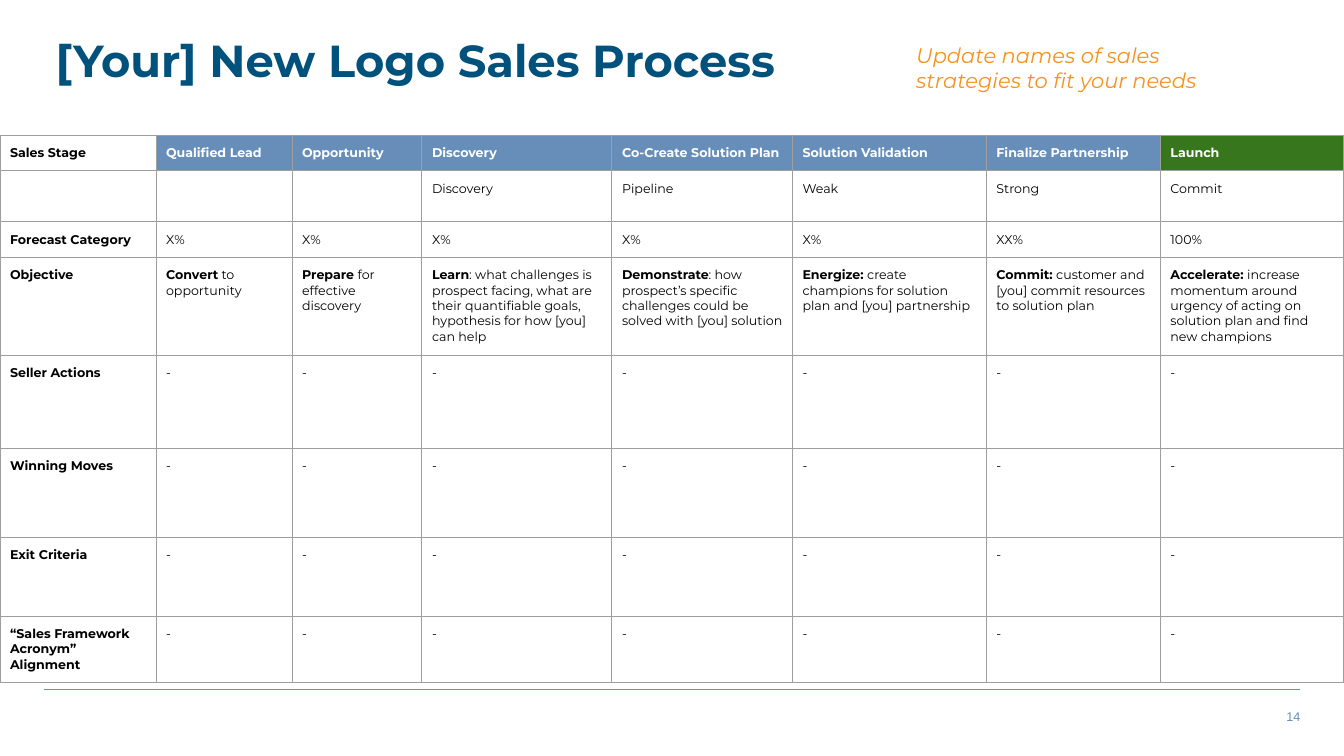
"""Build a sales process slide with a stage-by-stage table."""
from dataclasses import dataclass

from lxml import etree
from pptx import Presentation
from pptx import util as u
from pptx.dml.color import RGBColor
from pptx.enum import shapes, text
from pptx.oxml import ns

COLORS = {
    "navy": "00517C", "blue": "668EB9", "green": "38761D", "orange": "F6921E",
    "black": "000000", "white": "FFFFFF", "gray": "9E9E9E",
}
SLIDE_WIDTH, SLIDE_HEIGHT = u.Inches(13.333), u.Inches(7.5)
COLUMN_SHARES = (11.61, 10.12, 9.67, 14.14, 13.43, 14.43, 12.95, 13.65)
ROW_SHARES = (4.63, 6.48, 4.63, 12.96, 12.3, 11.77, 10.45, 8.77)


@dataclass(frozen=True)
class Box:
    left: float
    top: float
    width: float
    height: float


@dataclass(frozen=True)
class Style:
    size: float
    color: str
    name: str = "Montserrat"
    bold: bool = False
    italic: bool = False


@dataclass(frozen=True)
class Entry:
    lead: str = ""
    rest: str = ""
    color: str = "black"
    fill: str = "white"


TITLE_BOX = Box(3.38, 4.4, 63.9, 10.13)
HINT_BOX = Box(67.43, 4.27, 24.38, 5.33)
NUMBER_BOX = Box(57.5, 93.07, 40, 3.33)
TABLE_BOX = Box(0, 17.87, sum(COLUMN_SHARES), sum(ROW_SHARES))
RULE_BOX = Box(3.3, 91.2, 93.4, 0)

STAGES = ("Qualified Lead", "Opportunity", "Discovery", "Co-Create Solution Plan",
          "Solution Validation", "Finalize Partnership")
CATEGORIES = ("", "", "Discovery", "Pipeline", "Weak", "Strong", "Commit")
FORECASTS = ("X%",) * 5 + ("XX%", "100%")
OBJECTIVES = (
    Entry("Convert", " to opportunity"),
    Entry("Prepare ", "for effective discovery"),
    Entry("Learn", ": what challenges is prospect facing, what are their quantifiable "
          "goals, hypothesis for how [you] can help"),
    Entry("Demonstrate", ": how prospect’s specific challenges could be solved with "
          "[you] solution"),
    Entry("Energize: ", "create champions for solution plan and [you] partnership"),
    Entry("Commit: ", "customer and [you] commit resources to solution plan"),
    Entry("Accelerate: ", "increase momentum around urgency of acting on solution plan "
          "and find new champions"),
)
OPEN_ROWS = ("Seller Actions", "Winning Moves", "Exit Criteria",
             "“Sales Framework Acronym” Alignment")


def plain_row(label: str, values: tuple[str, ...]) -> list[Entry]:
    return [Entry(label), *(Entry(rest=value) for value in values)]


ROWS = [
    [Entry("Sales Stage"), *(Entry(stage, color="white", fill="blue") for stage in STAGES),
     Entry("Launch", color="white", fill="green")],
    plain_row("", CATEGORIES),
    plain_row("Forecast Category", FORECASTS),
    [Entry("Objective"), *OBJECTIVES],
    *(plain_row(label, ("-",) * 7) for label in OPEN_ROWS),
]


def rgb(color: str) -> RGBColor:
    return RGBColor.from_string(COLORS[color])


def across(share: float) -> int:
    return round(SLIDE_WIDTH * share / 100)


def down(share: float) -> int:
    return round(SLIDE_HEIGHT * share / 100)


def place(box: Box) -> tuple[int, int, int, int]:
    return across(box.left), down(box.top), across(box.width), down(box.height)


def set_all(target: object, values: dict) -> None:
    for name, value in values.items():
        setattr(target, name, value)


def margins(horizontal: float, vertical: float) -> dict:
    return {"margin_left": u.Inches(horizontal), "margin_right": u.Inches(horizontal),
            "margin_top": u.Inches(vertical), "margin_bottom": u.Inches(vertical)}


def add_run(paragraph, words: str, style: Style) -> None:
    run = paragraph.add_run()
    run.text = words
    set_all(run.font, {"size": u.Pt(style.size), "name": style.name,
                       "bold": style.bold, "italic": style.italic})
    run.font.color.rgb = rgb(style.color)


def write(shape, box: Box, words: str, style: Style, vertical_margin: float,
          paragraph_format: dict) -> None:
    set_all(shape, dict(zip(("left", "top", "width", "height"), place(box))))
    set_all(shape.text_frame, {
        "word_wrap": True, "auto_size": text.MSO_AUTO_SIZE.NONE,
        "vertical_anchor": text.MSO_ANCHOR.TOP, **margins(0.1, vertical_margin)})
    paragraph = shape.text_frame.paragraphs[0]
    set_all(paragraph, paragraph_format)
    add_run(paragraph, words, style)


def add_borders(cell) -> None:
    properties = cell._tc.get_or_add_tcPr()
    for side in ("lnL", "lnR", "lnT", "lnB"):
        line = etree.SubElement(properties, ns.qn(f"a:{side}"), w=str(u.Pt(0.75)))
        fill = etree.SubElement(line, ns.qn("a:solidFill"))
        etree.SubElement(fill, ns.qn("a:srgbClr"), val=COLORS["gray"])


def fill_cell(cell, entry: Entry) -> None:
    set_all(cell, margins(0.1, 0.1))
    add_borders(cell)
    cell.fill.solid()
    cell.fill.fore_color.rgb = rgb(entry.fill)
    for words, bold in ((entry.lead, True), (entry.rest, False)):
        if words:
            add_run(cell.text_frame.paragraphs[0], words,
                    Style(9, entry.color, bold=bold))


def add_stage_table(slide) -> None:
    table = slide.shapes.add_table(len(ROWS), len(COLUMN_SHARES), *place(TABLE_BOX)).table
    set_all(table, {"first_row": False, "horz_banding": False})
    for column, share in zip(table.columns, COLUMN_SHARES):
        column.width = across(share)
    for row, share, entries in zip(table.rows, ROW_SHARES, ROWS):
        row.height = down(share)
        for cell, entry in zip(row.cells, entries):
            fill_cell(cell, entry)


def add_rule(slide, box: Box) -> None:
    left, top, width, height = place(box)
    rule = slide.shapes.add_connector(
        shapes.MSO_CONNECTOR.STRAIGHT, left, top, left + width, top + height)
    rule.line.color.rgb = rgb("blue")
    rule.line.width = u.Pt(1)
    etree.SubElement(rule._element.spPr, ns.qn("a:effectLst"))


def main() -> None:
    presentation = Presentation()
    set_all(presentation, {"slide_width": SLIDE_WIDTH, "slide_height": SLIDE_HEIGHT})
    slide = presentation.slides.add_slide(presentation.slide_layouts[5])
    add_rule(slide, RULE_BOX)
    write(slide.shapes.add_textbox(0, 0, 0, 0), NUMBER_BOX, "14",
          Style(9, "blue", name="Arial"), 0.05, {"alignment": text.PP_ALIGN.RIGHT})
    write(slide.shapes.title, TITLE_BOX, "[Your] New Logo Sales Process",
          Style(32, "navy", bold=True), 0.05,
          {"alignment": text.PP_ALIGN.LEFT, "line_spacing": 0.9})
    add_stage_table(slide)
    write(slide.shapes.add_textbox(0, 0, 0, 0), HINT_BOX,
          "Update names of sales strategies to fit your needs",
          Style(15, "orange", italic=True), 0.1, {"alignment": text.PP_ALIGN.LEFT})
    presentation.save("out.pptx")


if __name__ == "__main__":
    main()
